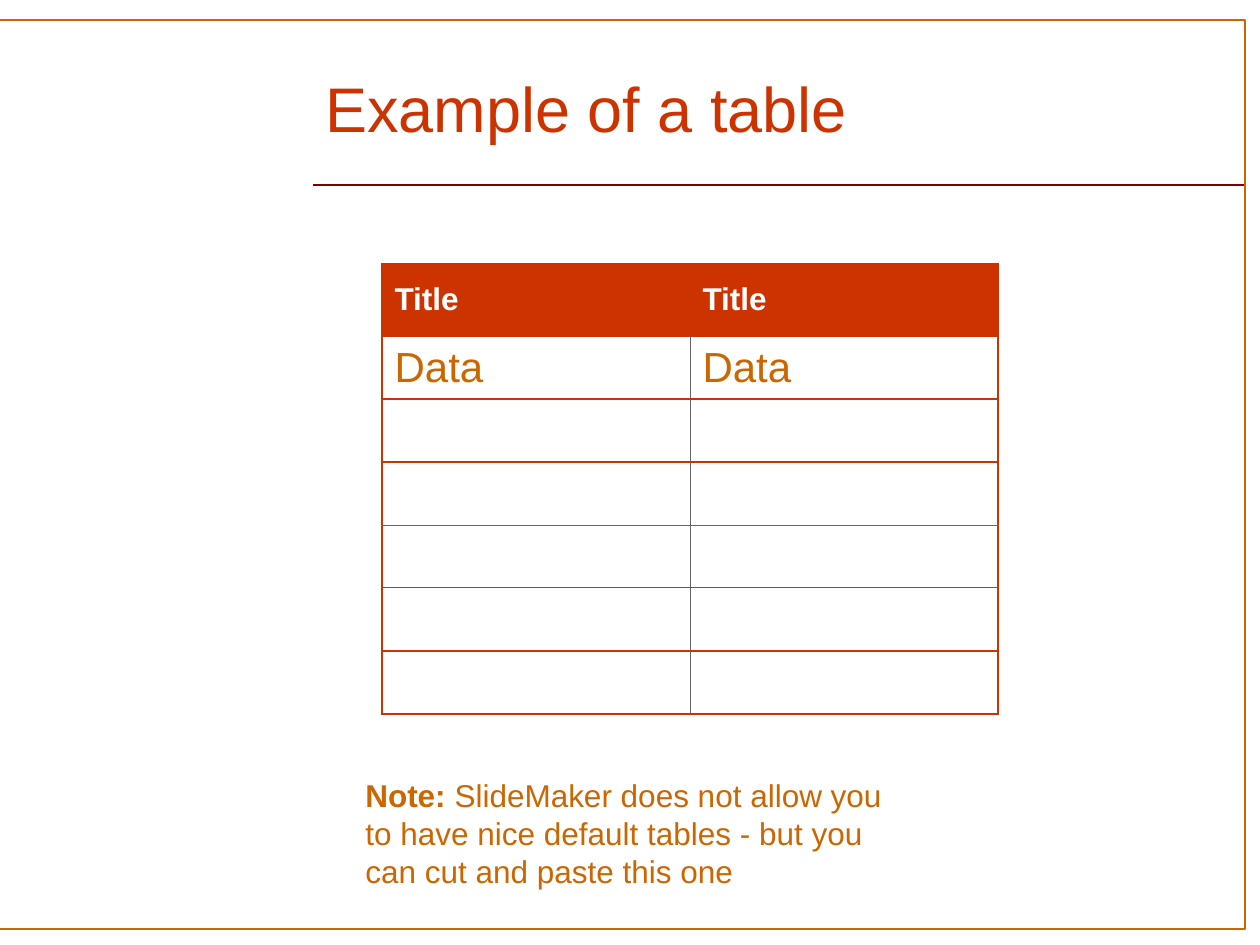
from lxml.etree import SubElement
from pptx import Presentation
from pptx.dml.color import RGBColor
from pptx.enum.shapes import MSO_CONNECTOR, MSO_SHAPE
from pptx.enum.text import MSO_ANCHOR
from pptx.oxml.ns import qn
from pptx.util import Pt

PX = 914400 // 126
COLORS = {"red": "CC3300", "orange": "CC6600", "maroon": "800000",
          "grey": "666666", "white": "FFFFFF"}

TITLE = "Example of a table"
HEADER = ["Title", "Title"]
BODY = [["Data", "Data"]] + [["", ""]] * 5
NOTE = [("Note: ", True),
        ("SlideMaker does not allow you to have nice default tables"
         " - but you can cut and paste this one", False)]

TABLE_LEFT, TABLE_TOP, COL_W, HEADER_H, ROW_H = 382, 264, 308, 72, 63
OUTER, DIVIDER = ("red", 1), ("grey", 0.5)
# Horizontal rules, from the top edge to the bottom edge
ROW_RULES = [OUTER, OUTER, OUTER, OUTER, DIVIDER, ("red", 0.5), OUTER, OUTER]
COL_RULES = [OUTER, DIVIDER, OUTER]


def px(*values):
    return [v * PX for v in values]


def rgb(name):
    return RGBColor.from_string(COLORS[name])


def add_text(p, text, size=18, color="orange", bold=False):
    r = p.add_run()
    r.text = text
    r.font.name, r.font.size, r.font.bold = "Arial", Pt(size), bold
    r.font.color.rgb = rgb(color)


def add_box(slide, *box, anchor=MSO_ANCHOR.TOP):
    tf = slide.shapes.add_textbox(*px(*box)).text_frame
    tf.word_wrap = True
    tf.vertical_anchor = anchor
    return tf.paragraphs[0]


def set_borders(cell, **rules):
    """Draw cell edges; must run before the cell's fill is set."""
    tc_pr = cell._tc.get_or_add_tcPr()
    for side, (color, width) in rules.items():
        ln = SubElement(tc_pr, qn(f"a:ln{side}"), w=str(Pt(width)))
        SubElement(SubElement(ln, qn("a:solidFill")), qn("a:srgbClr"),
                   val=COLORS[color])


def add_frame(slide):
    line = slide.shapes.add_connector(MSO_CONNECTOR.STRAIGHT,
                                      *px(313, 185, 1245, 185))
    line.line.color.rgb, line.line.width = rgb("maroon"), Pt(0.75)
    SubElement(line._element.spPr, qn("a:effectLst"))
    sp = slide.shapes.add_shape(MSO_SHAPE.RECTANGLE, *px(-5, 20, 1250, 909))
    sp.shadow.inherit = False
    sp.fill.background()
    sp.line.color.rgb, sp.line.width = rgb("orange"), Pt(0.75)


def add_data_table(slide):
    rows = [HEADER] + BODY
    height = HEADER_H + ROW_H * len(BODY)
    table = slide.shapes.add_table(
        len(rows), len(HEADER),
        *px(TABLE_LEFT, TABLE_TOP, COL_W * len(HEADER), height)).table
    table.horz_banding = False
    for col in table.columns:
        col.width = COL_W * PX
    for i, row in enumerate(rows):
        is_header = i == 0
        table.rows[i].height = (HEADER_H if is_header else ROW_H) * PX
        for j, text in enumerate(row):
            cell = table.cell(i, j)
            cell.vertical_anchor = MSO_ANCHOR.MIDDLE
            sides = [OUTER, OUTER] if is_header else COL_RULES[j:j + 2]
            set_borders(cell, L=sides[0], R=sides[1],
                        T=ROW_RULES[i], B=ROW_RULES[i + 1])
            p = cell.text_frame.paragraphs[0]
            if is_header:
                cell.fill.solid()
                cell.fill.fore_color.rgb = rgb("red")
                add_text(p, text, color="white", bold=True)
            else:
                cell.fill.background()
                if text:
                    add_text(p, text, size=24)


def main():
    prs = Presentation()
    prs.slide_width, prs.slide_height = px(1260, 945)
    slide = prs.slides.add_slide(prs.slide_layouts[6])
    add_frame(slide)
    title = add_box(slide, 313, 50, 905, 115, anchor=MSO_ANCHOR.MIDDLE)
    add_text(title, TITLE, size=36, color="red")
    add_data_table(slide)
    note = add_box(slide, 353, 770, 566, 126)
    for text, bold in NOTE:
        add_text(note, text, bold=bold)
    prs.save("out.pptx")


if __name__ == "__main__":
    main()
